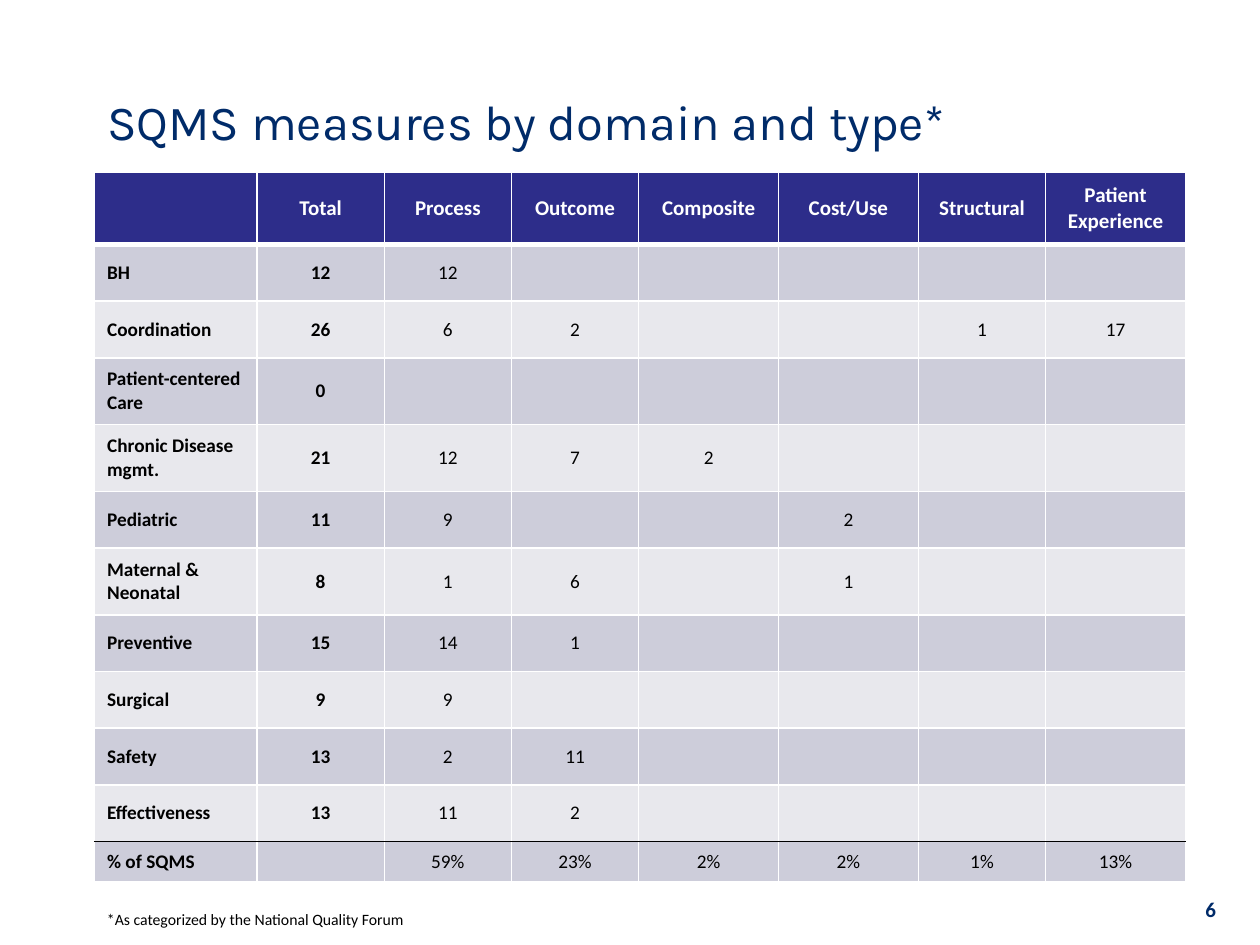
from typing import NamedTuple

from lxml.etree import SubElement
from pptx import Presentation
from pptx.dml.color import RGBColor
from pptx.enum.text import MSO_ANCHOR as Anchor, PP_ALIGN as Align
from pptx.oxml.ns import qn
from pptx.util import Inches, Pt

NAVY, INDIGO, WHITE, BLACK = "002B69", "2D2D8A", "FFFFFF", "000000"
BANDS = ("CDCDDA", "E8E8ED")
BODY_SIZE, HEADER_SIZE = 11, 12


class Domain(NamedTuple):
    name: str
    values: tuple  # one per measure column, None where there is no measure
    height: float = 0.45


class Rule(NamedTuple):
    color: str = WHITE
    width: float = 1


HEADERS = ("", "Total", "Process", "Outcome", "Composite", "Cost/Use",
           "Structural", "Patient\nExperience")
COL_WIDTHS = (1.29, 1.01, 1.01, 1.01, 1.11, 1.11, 1.01, 1.11)
DOMAINS = (
    Domain("BH", (12, 12)),
    Domain("Coordination", (26, 6, 2, None, None, 1, 17)),
    Domain("Patient-centered Care", (0,), 0.53),
    Domain("Chronic Disease mgmt.", (21, 12, 7, 2), 0.53),
    Domain("Pediatric", (11, 9, None, None, 2)),
    Domain("Maternal & Neonatal", (8, 1, 6, None, 1), 0.53),
    Domain("Preventive", (15, 14, 1)),
    Domain("Surgical", (9, 9)),
    Domain("Safety", (13, 2, 11)),
    Domain("Effectiveness", (13, 11, 2)),
    Domain("% of SQMS", (None, "59%", "23%", "2%", "2%", "1%", "13%"), 0.32),
)
# Horizontal rules that differ from the thin white grid, by the row below them
ROW_RULES = {1: Rule(width=3), len(DOMAINS): Rule(BLACK)}


def rgb(color: str) -> RGBColor:
    return RGBColor.from_string(color)


def format_paragraph(p, color: str, align=Align.LEFT, **font) -> None:
    p.alignment = align
    for r in p.runs:
        r.font.color.rgb = rgb(color)
        for name, value in font.items():
            setattr(r.font, name, value)


def set_borders(cell, row: int) -> None:
    """Draw the four sides; must run before the cell gets its fill."""
    sides = {"a:lnL": Rule(), "a:lnR": Rule(),
             "a:lnT": ROW_RULES.get(row, Rule()),
             "a:lnB": ROW_RULES.get(row + 1, Rule())}
    tc_pr = cell._tc.get_or_add_tcPr()
    for tag, rule in sides.items():
        ln = SubElement(tc_pr, qn(tag), w=str(Pt(rule.width)))
        SubElement(SubElement(ln, qn("a:solidFill")), qn("a:srgbClr"), val=rule.color)


def fill_cell(cell, row: int, col: int, text: str) -> None:
    header = row == 0
    size = HEADER_SIZE if header else BODY_SIZE
    set_borders(cell, row)
    cell.fill.solid()
    cell.fill.fore_color.rgb = rgb(INDIGO if header else BANDS[(row - 1) % 2])
    cell.vertical_anchor = Anchor.MIDDLE
    cell.text = text
    for p in cell.text_frame.paragraphs:
        format_paragraph(p, WHITE if header else BLACK,
                         Align.CENTER if header or col else Align.LEFT,
                         name="Calibri", size=Pt(size), bold=header or col < 2)
        if not text:
            SubElement(p._p, qn("a:endParaRPr"), sz=str(size * 100))


def add_measure_table(slide) -> None:
    heights = [0.57] + [domain.height for domain in DOMAINS]
    table = slide.shapes.add_table(
        len(heights), len(HEADERS), Inches(0.75), Inches(1.37),
        Inches(sum(COL_WIDTHS)), Inches(sum(heights))).table
    for column, width in zip(table.columns, COL_WIDTHS):
        column.width = Inches(width)
    for table_row, height in zip(table.rows, heights):
        table_row.height = Inches(height)
    rows = [HEADERS] + [(domain.name, *domain.values) for domain in DOMAINS]
    for i, values in enumerate(rows):
        for j in range(len(HEADERS)):
            value = values[j] if j < len(values) else None
            fill_cell(table.cell(i, j), i, j, "" if value is None else str(value))


def add_label(slide, text: str, box: tuple, color: str, align=Align.LEFT,
              anchor=Anchor.TOP, **font) -> None:
    tf = slide.shapes.add_textbox(*map(Inches, box)).text_frame
    tf.word_wrap = True
    tf.vertical_anchor = anchor
    tf.text = text
    format_paragraph(tf.paragraphs[0], color, align, name="Calibri", **font)


def add_title(slide, text: str) -> None:
    title = slide.shapes.title
    title.left, title.top, title.width, title.height = map(Inches, (0.75, 0.42, 8.5, 1.08))
    tf = title.text_frame
    tf.text = text
    tf.vertical_anchor = Anchor.MIDDLE
    format_paragraph(tf.paragraphs[0], NAVY, name="Karla", size=Pt(28))


def main() -> None:
    prs = Presentation()
    prs.slide_width, prs.slide_height = Inches(10), Inches(7.5)
    slide = prs.slides.add_slide(prs.slide_layouts[5])
    add_title(slide, "SQMS measures by domain and type*")
    add_measure_table(slide)
    add_label(slide, "*As categorized by the National Quality Forum",
              (0.75, 7.17, 5.08, 0.25), BLACK, size=Pt(9))
    add_label(slide, "6", (7.67, 7.08, 2.08, 0.27), NAVY, Align.RIGHT,
              Anchor.MIDDLE, size=Pt(12), bold=True)
    prs.save("out.pptx")


if __name__ == "__main__":
    main()
